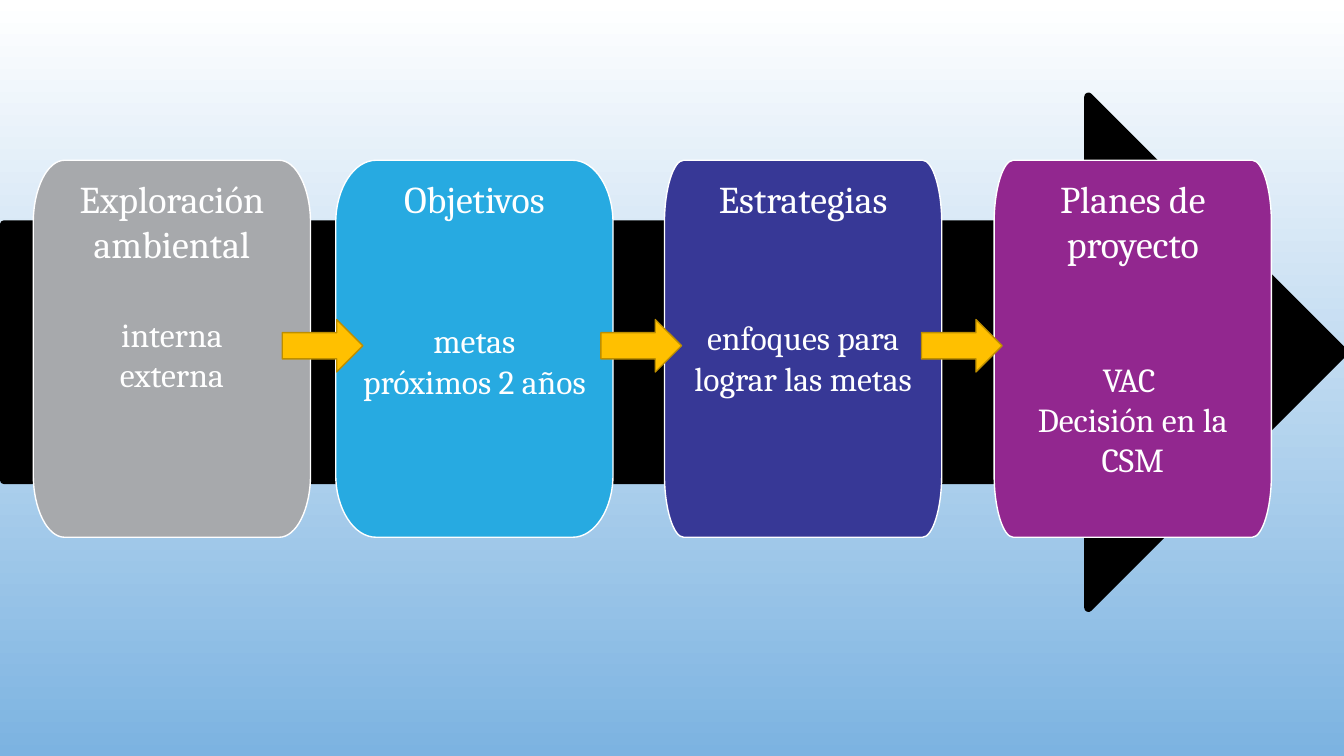
"""Build a four-step planning process slide."""
from lxml.etree import SubElement
from pptx import Presentation
from pptx.dml.color import RGBColor
from pptx.enum.shapes import MSO_SHAPE
from pptx.enum.text import MSO_ANCHOR, PP_ALIGN
from pptx.oxml.ns import qn
from pptx.util import Pt

PX = 9144
COLORS = {
    "white": "FFFFFF", "sky": "7CB3E1", "black": "000000",
    "gray": "A7A9AC", "cyan": "27AAE1", "indigo": "373896",
    "purple": "92278F", "gold": "FFC000", "bronze": "BD8E00",
}
CARD_TOP, CARD_WIDTH, CARD_HEIGHT, CORNER_HEIGHT = 159, 275, 374, 62
CURVE = 0.55
CARDS = [
    (33, 31, "gray", ["Exploración", "ambiental"], 34, ["interna", "externa"]),
    (333, 40, "cyan", ["Objetivos"], 71, ["metas", "próximos 2 años"]),
    (659, 19, "indigo", ["Estrategias"], 69, ["enfoques para lograr las metas"]),
    (986, 19, "purple", ["Planes de proyecto"], 66, ["VAC ", "Decisión en la CSM"]),
]
STEP_ARROW_LEFTS = [280, 596, 914]
TEXT_FRAME = {
    "word_wrap": True, "vertical_anchor": MSO_ANCHOR.TOP,
    "margin_left": 15 * PX, "margin_right": 15 * PX,
    "margin_top": 15 * PX, "margin_bottom": 15 * PX,
}


def color(name):
    return RGBColor.from_string(COLORS[name])


def apply(target, values):
    for name, value in values.items():
        setattr(target, name, value)


def paint(shape, fill, line, line_width):
    shape.shadow.inherit = False
    shape.fill.solid()
    shape.fill.fore_color.rgb = color(fill)
    shape.line.color.rgb = color(line)
    shape.line.width = Pt(line_width)


def set_background(slide):
    fill = slide.background.fill
    fill.gradient()
    fill.gradient_angle = 270
    for stop, name, position in zip(fill.gradient_stops, ("white", "sky"), (0, 1)):
        stop.color.rgb = color(name)
        stop.position = position


def add_arrow(slide, box, fill, line, line_width):
    lengths = [length * PX for length in box]
    shape = slide.shapes.add_shape(MSO_SHAPE.RIGHT_ARROW, *lengths)
    paint(shape, fill, line, line_width)


def card_outline(left, corner_width):
    """Return the eight ends of the card's straight edges, clockwise."""
    right, bottom = left + CARD_WIDTH, CARD_TOP + CARD_HEIGHT
    near_x, far_x = left + corner_width, right - corner_width
    near_y, far_y = CARD_TOP + CORNER_HEIGHT, bottom - CORNER_HEIGHT
    return [(left, near_y), (near_x, CARD_TOP), (far_x, CARD_TOP), (right, near_y),
            (right, far_y), (far_x, bottom), (near_x, bottom), (left, far_y)]


def round_corners(shape):
    """Turn every second segment of the outline into a quarter ellipse."""
    outline = next(shape.element.iter(qn("a:path")))
    segments = list(outline)[:8]
    points = [(int(segment[0].get("x")), int(segment[0].get("y"))) for segment in segments]
    for index in range(0, 8, 2):
        start, end = points[index:index + 2]
        corner = (start[0], end[1]) if index % 4 == 0 else (end[0], start[1])
        segment = segments[index + 1]
        segment.remove(segment[0])
        curve = outline.makeelement(qn("a:cubicBezTo"))
        for anchor in (start, end):
            x, y = (round(a + CURVE * (c - a)) for a, c in zip(anchor, corner))
            SubElement(curve, qn("a:pt"), x=str(x), y=str(y))
        SubElement(curve, qn("a:pt"), x=str(end[0]), y=str(end[1]))
        outline.replace(segment, curve)


def write_lines(text_frame, heading, gap, details):
    lines = [(text, 27, 0) for text in heading]
    lines += [(text, 24, 0 if index else gap) for index, text in enumerate(details)]
    for index, (text, size, space) in enumerate(lines):
        paragraph = text_frame.paragraphs[0] if index == 0 else text_frame.add_paragraph()
        apply(paragraph, {"alignment": PP_ALIGN.CENTER, "space_before": Pt(space)})
        run = paragraph.add_run()
        run.text = text
        apply(run.font, {"name": "Cambria", "size": Pt(size)})
        run.font.color.rgb = color("white")


def add_card(slide, left, corner_width, fill, heading, gap, details):
    start, *points = card_outline(left, corner_width)
    builder = slide.shapes.build_freeform(*start, scale=PX)
    builder.add_line_segments(points, close=True)
    shape = builder.convert_to_shape()
    round_corners(shape)
    paint(shape, fill, "white", 1)
    apply(shape.text_frame, TEXT_FRAME)
    write_lines(shape.text_frame, heading, gap, details)


def main():
    presentation = Presentation()
    apply(presentation, {"slide_width": 1333 * PX, "slide_height": 750 * PX})
    slide = presentation.slides.add_slide(presentation.slide_layouts[6])
    set_background(slide)
    add_arrow(slide, (4, 96, 1329, 507), "black", "black", 6)
    for card in CARDS:
        add_card(slide, *card)
    for left in STEP_ARROW_LEFTS:
        add_arrow(slide, (left, 317, 80, 52), "gold", "bronze", 1)
    presentation.save("out.pptx")


if __name__ == "__main__":
    main()
